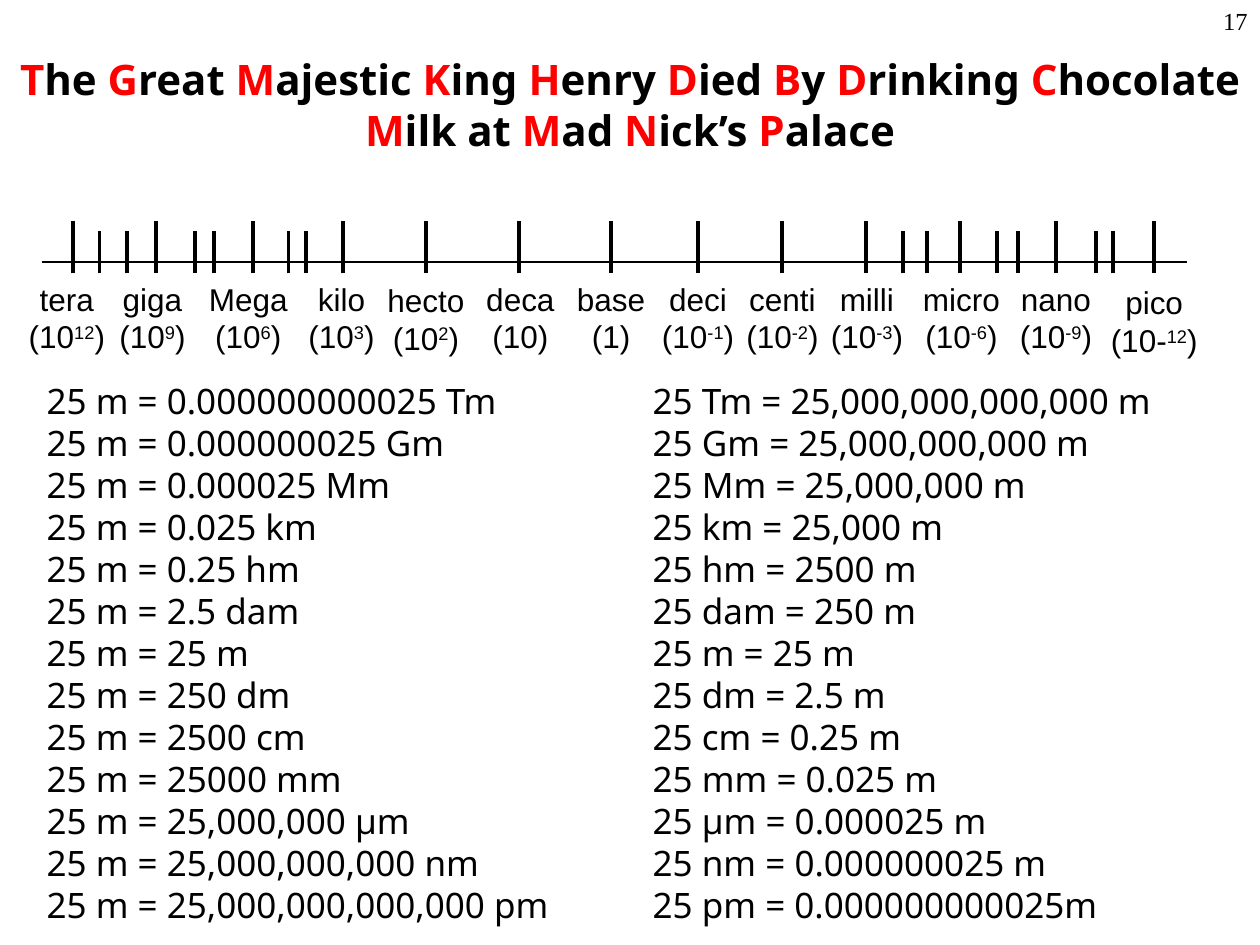
from dataclasses import dataclass
from itertools import groupby

from lxml import etree
from pptx import Presentation
from pptx.dml.color import RGBColor
from pptx.enum import shapes, text
from pptx.oxml.ns import qn
from pptx.util import Inches, Pt


@dataclass(frozen=True)
class Theme:
    """Colours, fonts and type sizes of the slide."""
    ink: RGBColor = RGBColor(0, 0, 0)
    accent: RGBColor = RGBColor(255, 0, 0)
    main_font: str = "Noto Sans"
    label_font: str = "Arial"
    number_font: str = "Times New Roman"
    title_size: int = 24
    body_size: int = 20
    label_size: int = 18
    number_size: int = 14


THEME = Theme()
TITLE = ("The Great Majestic King Henry Died By Drinking Chocolate "
         "Milk at Mad Nick’s Palace")

# name, label left, label top, tick x, base, exponent
PREFIXES = [
    ("tera", 0.07, 2.17, 0.58, "10", "12"),
    ("giga", 0.75, 2.17, 1.24, "10", "9"),
    ("Mega", 1.51, 2.17, 2.01, "10", "6"),
    ("kilo", 2.25, 2.17, 2.72, "10", "3"),
    ("hecto", 2.92, 2.18, 3.38, "10", "2"),
    ("deca", 3.67, 2.17, 4.12, "10", ""),
    ("base", 4.39, 2.17, 4.85, "1", ""),
    ("deci", 5.08, 2.17, 5.54, "10", "-1"),
    ("centi", 5.75, 2.17, 6.21, "10", "-2"),
    ("milli", 6.42, 2.17, 6.87, "10", "-3"),
    ("micro", 7.17, 2.17, 7.62, "10", "-6"),
    ("nano", 7.92, 2.17, 8.38, "10", "-9"),
    ("pico", 8.7, 2.2, 9.16, "10-", "12"),
]
MINOR_TICKS = [0.79, 1.01, 1.55, 1.7, 2.29, 2.43,
               7.17, 7.36, 7.91, 8.08, 8.7, 8.83]

CONVERSIONS = [
    ("Tm", "0.000000000025", "25,000,000,000,000 m"),
    ("Gm", "0.000000025", "25,000,000,000 m"),
    ("Mm", "0.000025", "25,000,000 m"),
    ("km", "0.025", "25,000 m"),
    ("hm", "0.25", "2500 m"),
    ("dam", "2.5", "250 m"),
    ("m", "25", "25 m"),
    ("dm", "250", "2.5 m"),
    ("cm", "2500", "0.25 m"),
    ("mm", "25000", "0.025 m"),
    ("μm", "25,000,000", "0.000025 m"),
    ("nm", "25,000,000,000", "0.000000025 m"),
    ("pm", "25,000,000,000,000", "0.000000000025m"),
]


def place(sp, left, top, width, height):
    """Position a shape and return its top-anchored, wrapping text frame."""
    sp.left, sp.top, sp.width, sp.height = map(Inches, (left, top, width, height))
    tf = sp.text_frame
    tf.word_wrap = True
    tf.auto_size = text.MSO_AUTO_SIZE.NONE
    tf.vertical_anchor = text.MSO_ANCHOR.TOP
    return tf


def style(p, font, size, align, pitch=None):
    """Set the font, alignment and spacing of a paragraph."""
    p.font.name, p.font.size = font, Pt(size)
    p.font.color.rgb = THEME.ink
    p.alignment = align
    p.space_before = Pt(0)
    if pitch:
        p.line_spacing = Pt(pitch)


def fill_title(sp):
    """Write the mnemonic with every capital in the accent colour."""
    tf = place(sp, 0, 0.34, 10, 0.91)
    tf.margin_top = Inches(0.08)
    p = tf.paragraphs[0]
    style(p, THEME.main_font, THEME.title_size, text.PP_ALIGN.CENTER, 29)
    p.font.bold = True
    for capital, letters in groupby(TITLE, str.isupper):
        r = p.add_run()
        r.text = "".join(letters)
        r.font.color.rgb = THEME.accent if capital else THEME.ink


def fill_list(sp, left, width, lines):
    """Write a column of equations without bullets."""
    tf = place(sp, left, 2.93, width, 4.48)
    tf.margin_top = Inches(0.08)
    tf.text = "\n".join(lines)
    for p in tf.paragraphs:
        style(p, THEME.main_font, THEME.body_size, text.PP_ALIGN.LEFT, 24)
        pPr = p._p.get_or_add_pPr()
        pPr.set("marL", "0")
        pPr.set("indent", "0")
        pPr.insert_element_before(etree.Element(qn("a:buNone")),
                                  "a:tabLst", "a:defRPr", "a:extLst")


def add_label(s, name, left, top, base, exponent):
    """Add a prefix name above its power of ten."""
    tf = place(s.shapes.add_textbox(0, 0, 0, 0), left, top, 0.92, 0.71)
    tf.text = name
    p = tf.add_paragraph()
    parts = [f"({base}", exponent, ")"] if exponent else [f"({base})"]
    for i, part in enumerate(parts):
        r = p.add_run()
        r.text = part
        if i == 1:
            r._r.get_or_add_rPr().set("baseline", "30000")
    for p in tf.paragraphs:
        style(p, THEME.label_font, THEME.label_size, text.PP_ALIGN.CENTER)


def add_line(s, x1, y1, x2, y2, weight):
    """Add a straight line without a shadow."""
    line = s.shapes.add_connector(shapes.MSO_CONNECTOR.STRAIGHT,
                                  *map(Inches, (x1, y1, x2, y2)))
    line.line.color.rgb = THEME.ink
    line.line.width = Pt(weight)
    etree.SubElement(line._element.spPr, qn("a:effectLst"))


def add_page_number(s, number):
    """Add the page number in the top right corner."""
    tf = place(s.shapes.add_textbox(0, 0, 0, 0), 8.75, 0, 1.25, 0.33)
    tf.text = number
    style(tf.paragraphs[0], THEME.number_font, THEME.number_size, text.PP_ALIGN.RIGHT)


def main():
    """Build the metric prefix slide."""
    prs = Presentation()
    prs.slide_width, prs.slide_height = Inches(10), Inches(7.5)
    s = prs.slides.add_slide(prs.slide_layouts[3])
    title, left_list, right_list = s.placeholders
    add_page_number(s, "17")
    add_line(s, 0.33, 2.08, 9.42, 2.08, 0.75)
    for name, left, top, tick, base, exponent in PREFIXES:
        add_label(s, name, left, top, base, exponent)
        add_line(s, tick, 2.17, tick, 1.75, 2.25)
    for tick in MINOR_TICKS:
        add_line(s, tick, 2.17, tick, 1.83, 2.25)
    fill_title(title)
    fill_list(left_list, 0.27, 4.58, [f"25 m = {n} {unit}" for unit, n, _ in CONVERSIONS])
    fill_list(right_list, 5.08, 4.68, [f"25 {unit} = {m}" for unit, _, m in CONVERSIONS])
    prs.save("out.pptx")


if __name__ == "__main__":
    main()
